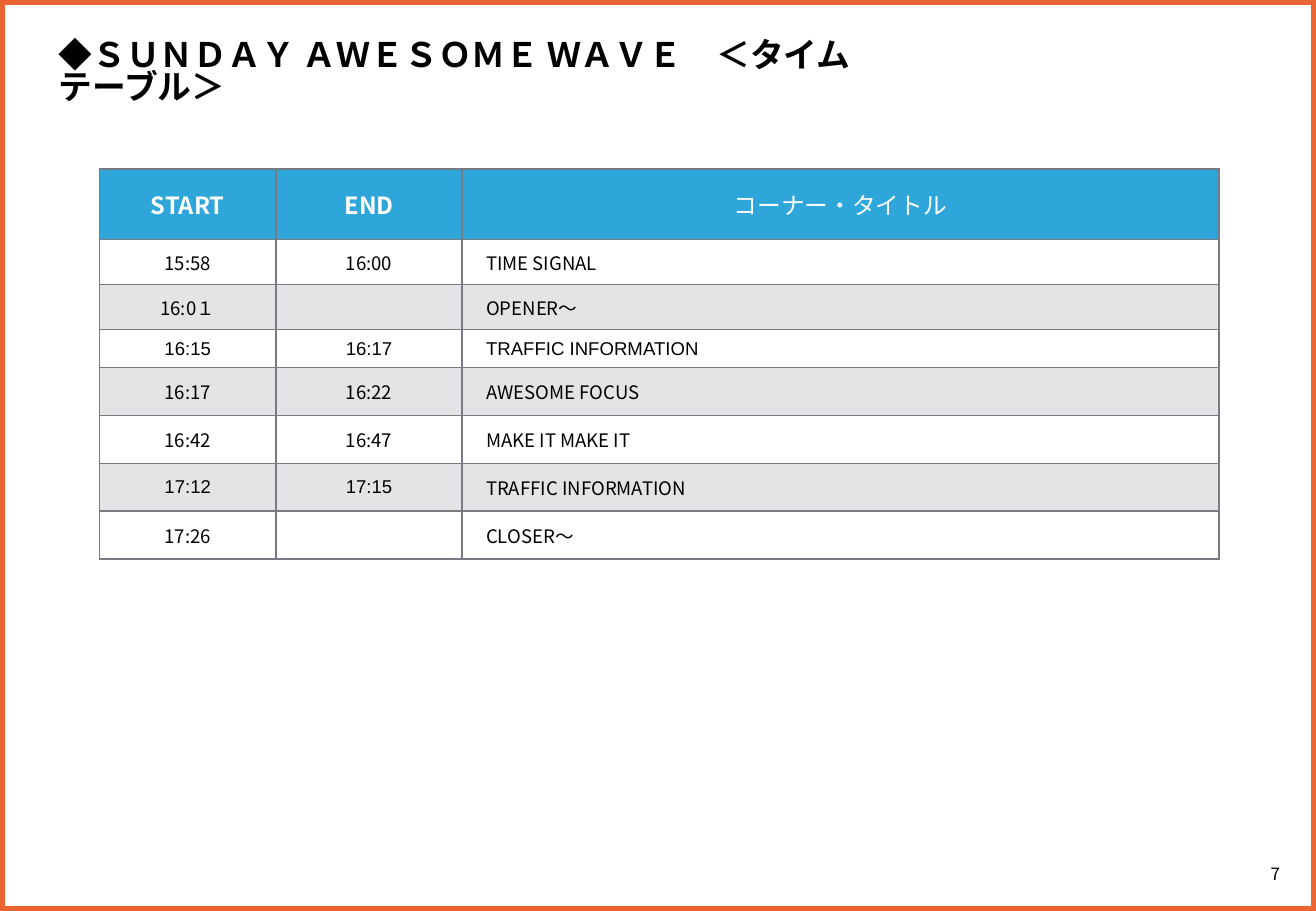
"""Build the timetable slide of a Sunday radio programme."""
from dataclasses import dataclass

from lxml.etree import SubElement
from pptx import Presentation
from pptx.dml.color import RGBColor
from pptx.enum.shapes import MSO_SHAPE
from pptx.enum.text import MSO_ANCHOR, MSO_AUTO_SIZE, PP_ALIGN
from pptx.oxml.ns import qn
from pptx.util import Cm, Pt


@dataclass(frozen=True)
class Theme:
    black: RGBColor = RGBColor(0x00, 0x00, 0x00)
    white: RGBColor = RGBColor(0xFF, 0xFF, 0xFF)
    orange: RGBColor = RGBColor(0xEB, 0x64, 0x32)
    blue: RGBColor = RGBColor(0x2E, 0xA6, 0xDA)
    grey: RGBColor = RGBColor(0x79, 0x7B, 0x84)
    title: Pt = Pt(20)
    header: Pt = Pt(14)
    body: Pt = Pt(11)
    number: Pt = Pt(10)
    noto: str = "Noto Sans CJK JP"
    arial: str = "Arial"


T = Theme()


def style_run(r, size, color, bold=False, font=T.noto):
    r.font.size, r.font.bold, r.font.name = size, bold, font
    r.font.color.rgb = color
    SubElement(r.font._element, qn("a:ea")).set("typeface", T.noto)


def add_borders(cell):
    tcPr = cell._tc.get_or_add_tcPr()
    for side in ("a:lnL", "a:lnR", "a:lnT", "a:lnB"):
        ln = SubElement(tcPr, qn(side), w=str(Pt(1)))
        fill = SubElement(ln, qn("a:solidFill"))
        SubElement(fill, qn("a:srgbClr"), val=str(T.grey))


prs = Presentation()
prs.slide_width, prs.slide_height = Cm(27.51), Cm(19.05)
s = prs.slides.add_slide(prs.slide_layouts[5])

frame = s.shapes.add_shape(MSO_SHAPE.RECTANGLE, 0, 0, prs.slide_width, prs.slide_height)
frame.shadow.inherit = False
frame.fill.background()
frame.line.color.rgb = T.orange
frame.line.width = Pt(6)

title = s.shapes.title
title.left, title.top, title.width, title.height = Cm(0.97), Cm(0.74), Cm(18), Cm(1.12)
tf = title.text_frame
tf.word_wrap = True
tf.auto_size = MSO_AUTO_SIZE.SHAPE_TO_FIT_TEXT
tf.vertical_anchor = MSO_ANCHOR.TOP
p = tf.paragraphs[0]
p.alignment = PP_ALIGN.LEFT
p.line_spacing = 0.8
for text, bold in (("◆", False), ("ＳＵＮＤＡＹ ＡＷＥＳＯＭＥ ＷＡＶＥ　＜タイムテーブル＞", True)):
    r = p.add_run()
    r.text = text
    style_run(r, T.title, T.black, bold)

timetable = [
    (1.48, "START", "END", "コーナー・タイトル"),
    (0.94, "15:58", "16:00", "TIME SIGNAL"),
    (0.94, "16:0１", "", "OPENER〜"),
    (0.8, "16:15", "16:17", "TRAFFIC INFORMATION"),
    (1, "16:17", "16:22", "AWESOME FOCUS"),
    (1, "16:42", "16:47", "MAKE IT MAKE IT"),
    (1, "17:12", "17:15", "TRAFFIC INFORMATION"),
    (1, "17:26", "", "CLOSER～"),
]
arial_cells = {(0, 2), (3, 0), (3, 1), (3, 2), (6, 0), (6, 1)}

table = s.shapes.add_table(len(timetable), 3, Cm(2.08), Cm(3.53), Cm(23.4), Cm(8.16)).table
table.first_row = table.horz_banding = False
for column, width in zip(table.columns, (3.69, 3.89, 15.82)):
    column.width = Cm(width)

for i, (height, *texts) in enumerate(timetable):
    table.rows[i].height = Cm(height)
    for j, text in enumerate(texts):
        cell = table.cell(i, j)
        is_corner = i > 0 and j == 2
        cell.margin_left = Cm(0.5) if is_corner else 0
        cell.margin_right = cell.margin_top = cell.margin_bottom = 0
        cell.vertical_anchor = MSO_ANCHOR.MIDDLE
        add_borders(cell)
        if i == 0:
            cell.fill.solid()
            cell.fill.fore_color.rgb = T.blue
        elif i % 2 == 0:
            cell.fill.solid()
            cell.fill.fore_color.rgb = T.grey
            color = cell._tc.tcPr.find(qn("a:solidFill")).find(qn("a:srgbClr"))
            SubElement(color, qn("a:alpha"), val="20000")
        else:
            cell.fill.background()
        cell.text_frame.text = text
        p = cell.text_frame.paragraphs[0]
        p.alignment = PP_ALIGN.LEFT if is_corner else PP_ALIGN.CENTER
        font = T.arial if (i, j) in arial_cells else T.noto
        for r in p.runs:
            if i == 0:
                style_run(r, T.header, T.white, j < 2, font)
            else:
                style_run(r, T.body, T.black, False, font)

number = s.shapes.add_textbox(Cm(25.81), Cm(17.83), Cm(1.7), Cm(0.89))
tf = number.text_frame
tf.word_wrap = True
tf.vertical_anchor = MSO_ANCHOR.MIDDLE
tf.text = "7"
p = tf.paragraphs[0]
p.alignment = PP_ALIGN.CENTER
style_run(p.runs[0], T.number, T.black)

prs.save("out.pptx")
